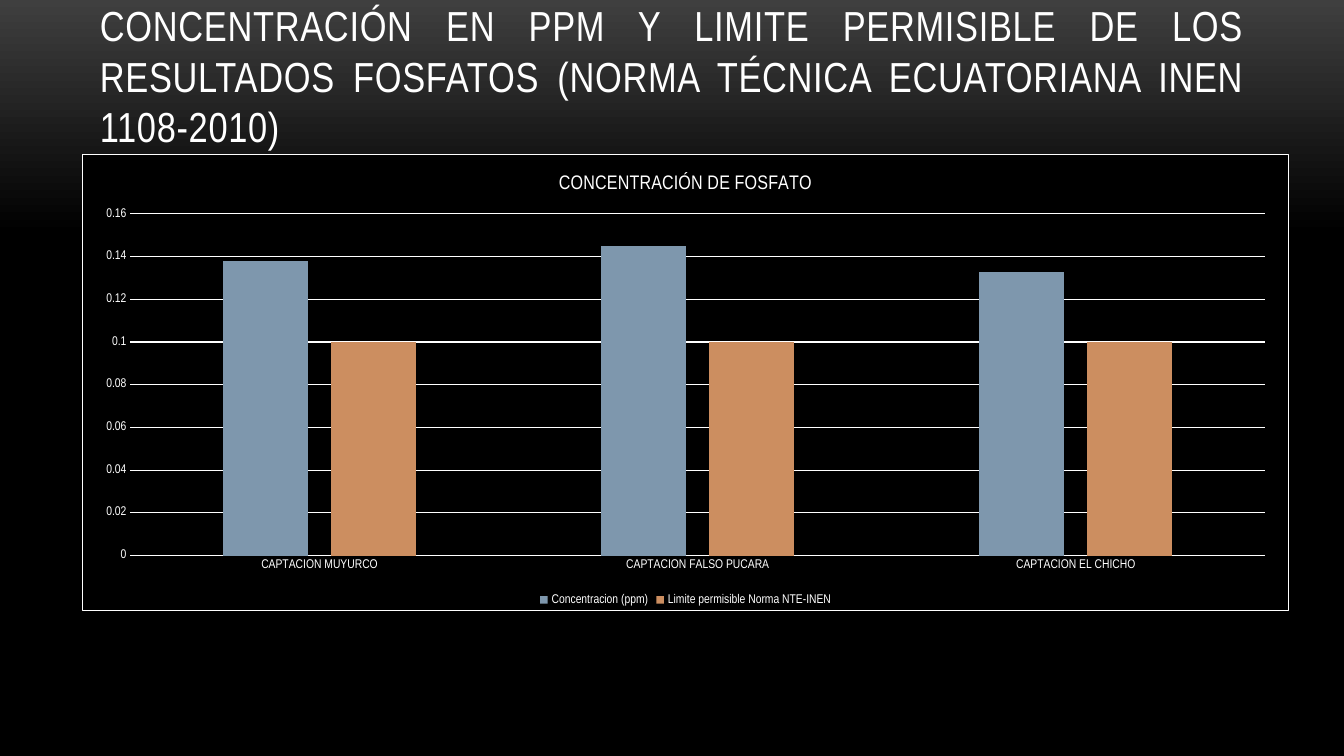
from pptx import Presentation
from pptx.chart.data import CategoryChartData
from pptx.dml.color import RGBColor
from pptx.enum import chart as ch, text
from pptx.oxml import parse_xml
from pptx.oxml.ns import nsdecls
from pptx.util import Inches, Pt

WHITE = RGBColor(0xFF, 0xFF, 0xFF)
BLACK = RGBColor(0x00, 0x00, 0x00)
GRAY = RGBColor(0x3F, 0x3F, 0x3F)
BLUE = RGBColor(0x7E, 0x97, 0xAD)
ORANGE = RGBColor(0xCC, 0x8E, 0x60)


def format_font(font, size, color=WHITE, name="Arial Narrow"):
    font.size = Pt(size)
    font.name = name
    font.bold = False
    font.color.rgb = color


def write_text(frame, words, size, align):
    paragraph = frame.paragraphs[0]
    paragraph.alignment = align
    run = paragraph.add_run()
    run.text = words
    format_font(run.font, size)
    return run


presentation = Presentation()
presentation.slide_width = Inches(13.33)
presentation.slide_height = Inches(7.5)
slide = presentation.slides.add_slide(presentation.slide_layouts[5])

# Background
background = slide.background.fill
background.gradient()
background.gradient_angle = 270
for stop, color, position in zip(background.gradient_stops, (GRAY, BLACK), (0, 0.31)):
    stop.color.rgb = color
    stop.position = position

# Title
title = slide.shapes.title
title.left, title.top = Inches(0.89), Inches(0.3)
title.width, title.height = Inches(11.56), Inches(1.25)
title.text_frame.word_wrap = True
title.text_frame.auto_size = text.MSO_AUTO_SIZE.NONE
title.text_frame.vertical_anchor = text.MSO_ANCHOR.BOTTOM
title_run = write_text(
    title.text_frame,
    "CONCENTRACIÓN EN PPM Y LIMITE PERMISIBLE DE LOS RESULTADOS FOSFATOS "
    "(NORMA TÉCNICA ECUATORIANA INEN 1108-2010)",
    size=30, align=text.PP_ALIGN.JUSTIFY)
title_run.font._element.set("spc", "50")

# Phosphate chart
data = CategoryChartData()
data.categories = ["CAPTACION MUYURCO", "CAPTACION FALSO PUCARA", "CAPTACION EL CHICHO"]
data.add_series("Concentracion (ppm)", (0.138, 0.145, 0.133))
data.add_series("Limite permisible Norma NTE-INEN", (0.1, 0.1, 0.1))
chart = slide.shapes.add_chart(
    ch.XL_CHART_TYPE.COLUMN_CLUSTERED,
    Inches(0.81), Inches(1.53), Inches(11.98), Inches(4.53), data).chart
format_font(chart.font, 10)

chart.has_title = True
write_text(chart.chart_title.text_frame, "CONCENTRACIÓN DE FOSFATO",
           size=14, align=text.PP_ALIGN.CENTER)
chart.chart_title.include_in_layout = False

chart.has_legend = True
chart.legend.position = ch.XL_LEGEND_POSITION.BOTTOM
chart.legend.include_in_layout = False
format_font(chart.legend.font, 9)

plot = chart.plots[0]
plot.vary_by_categories = False
plot.gap_width = 219
plot.overlap = -27
for series, color in zip(plot.series, (BLUE, ORANGE)):
    series.format.fill.solid()
    series.format.fill.fore_color.rgb = color

category_axis, value_axis = chart.category_axis, chart.value_axis
for axis in (category_axis, value_axis):
    axis.major_tick_mark = ch.XL_TICK_MARK.NONE
    axis.minor_tick_mark = ch.XL_TICK_MARK.NONE
    format_font(axis.tick_labels.font, 9)
value_axis.minimum_scale, value_axis.maximum_scale = 0, 0.16
value_axis.major_unit = 0.02
value_axis.format.line.fill.background()
for line in (category_axis.format.line, value_axis.major_gridlines.format.line):
    line.color.rgb = WHITE
    line.width = Pt(0.75)

# Chart frame and plot area
chart_element = chart._chartSpace.chart
chart_element.addnext(parse_xml(
    f'<c:spPr {nsdecls("c", "a")}>'
    f'<a:solidFill><a:srgbClr val="{BLACK}"/></a:solidFill>'
    f'<a:ln w="{Pt(0.75)}"><a:solidFill><a:srgbClr val="{WHITE}"/></a:solidFill></a:ln>'
    '</c:spPr>'))
plot_area = chart_element.plotArea
for layout in plot_area.findall("{*}layout"):
    plot_area.remove(layout)
plot_area.insert(0, parse_xml(
    f'<c:layout {nsdecls("c")}><c:manualLayout><c:layoutTarget val="inner"/>'
    '<c:xMode val="edge"/><c:yMode val="edge"/>'
    '<c:x val="0.04"/><c:y val="0.13"/><c:w val="0.94"/><c:h val="0.75"/>'
    '</c:manualLayout></c:layout>'))

presentation.save("out.pptx")
